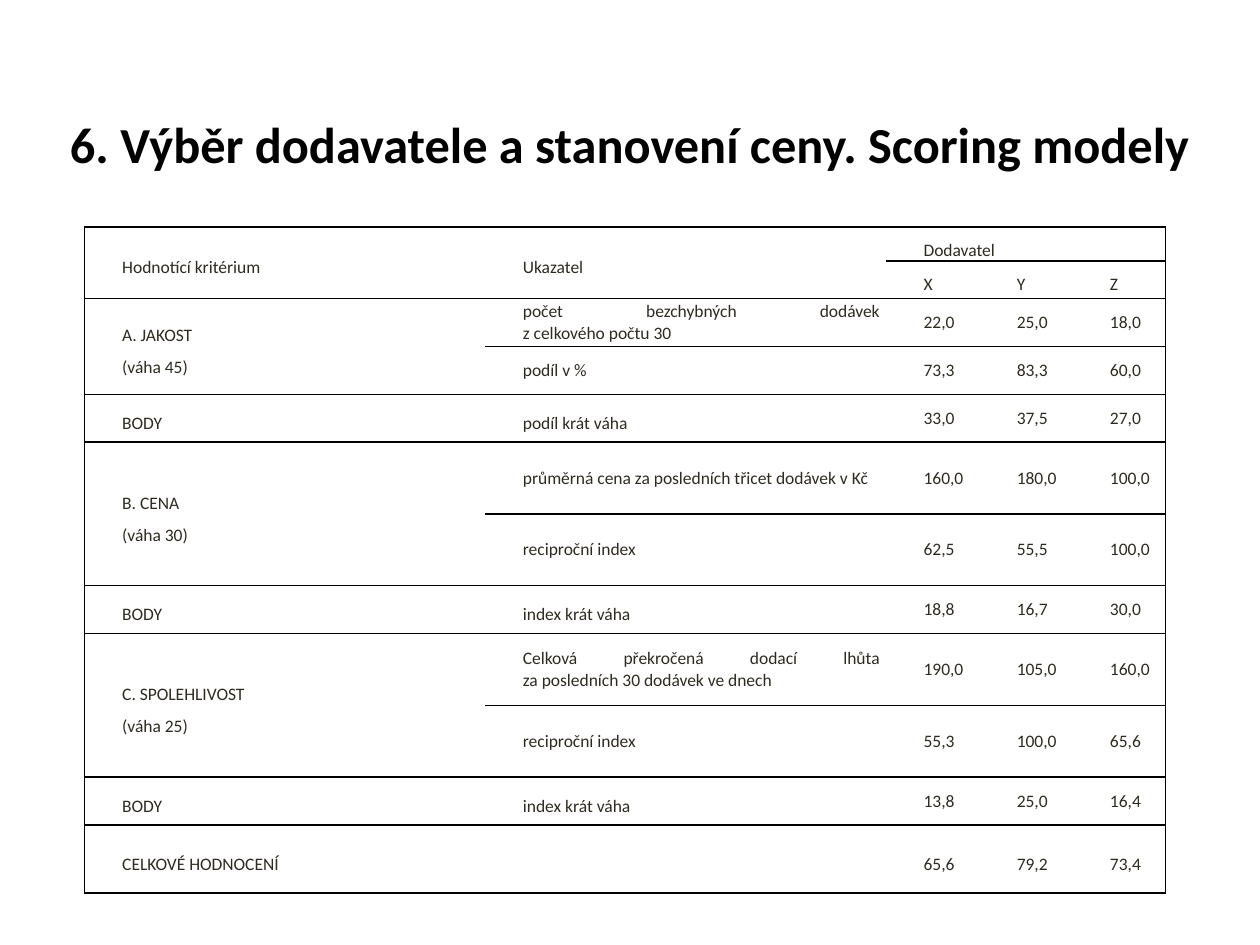
import pptx
import pptx.dml.color
import pptx.enum.text
import pptx.oxml
import pptx.oxml.ns
import pptx.util
from pptx.util import Inches

ALIGN = pptx.enum.text.PP_ALIGN
ANCHOR = pptx.enum.text.MSO_ANCHOR

THEME = {
    "font": "Calibri",
    "title_size": 28.8,
    "title_color": "000000",
    "title_spacing": 58,
    "table_size": 10,
    "table_color": "2F2B20",
    "cell_fill": "FFFFFF",
    "border_color": "000000",
    "border_width": 1,
    "loose_spacing": 1.5,
}

TITLE = "6. Výběr dodavatele a stanovení ceny. Scoring modely"

# Each row: kind, height, texts; None continues the merged cell above or to the left.
ROWS = [
    ("header", 0.27, ["Hodnotící kritérium", "Ukazatel", "Dodavatel", None, None]),
    ("header", 0.3, [None, None, "X", "Y", "Z"]),
    ("criterion", 0.38, ["A. JAKOST\n(váha 45)",
                         "počet bezchybných dodávek\nz celkového počtu 30",
                         "22,0", "25,0", "18,0"]),
    ("criterion", 0.38, [None, "podíl v %", "73,3", "83,3", "60,0"]),
    ("points", 0.38, ["BODY", "podíl krát váha", "33,0", "37,5", "27,0"]),
    ("criterion", 0.57, ["B. CENA\n(váha 30)",
                         "průměrná cena za posledních třicet dodávek v Kč",
                         "160,0", "180,0", "100,0"]),
    ("criterion", 0.57, [None, "reciproční index", "62,5", "55,5", "100,0"]),
    ("points", 0.38, ["BODY", "index krát váha", "18,8", "16,7", "30,0"]),
    ("criterion", 0.57, ["C. SPOLEHLIVOST\n(váha 25)",
                         "Celková překročená dodací lhůta\nza posledních 30 dodávek ve dnech",
                         "190,0", "105,0", "160,0"]),
    ("criterion", 0.57, [None, "reciproční index", "55,3", "100,0", "65,6"]),
    ("points", 0.38, ["BODY", "index krát váha", "13,8", "25,0", "16,4"]),
    ("total", 0.54, ["CELKOVÉ HODNOCENÍ", None, "65,6", "79,2", "73,4"]),
]
COLUMN_WIDTHS = [3.18, 3.18, 0.74, 0.74, 0.74]
# First and last cell (row, column) of each merged area
MERGES = [((0, 0), (1, 0)), ((0, 1), (1, 1)), ((0, 2), (0, 4)), ((2, 0), (3, 0)),
          ((5, 0), (6, 0)), ((8, 0), (9, 0)), ((11, 0), (11, 1))]
# How many leading columns of each row kind have loose line spacing
LOOSE_COLUMNS = {"header": 5, "criterion": 1, "points": 2, "total": 5}


def format_para(para, size, color, align, spacing, bold=False):
    para.alignment = align
    para.line_spacing = spacing
    for span in para.runs:
        span.font.name = THEME["font"]
        span.font.size = pptx.util.Pt(size)
        span.font.bold = bold
        span.font.color.rgb = pptx.dml.color.RGBColor.from_string(color)


def set_borders(cell, drawn_sides):
    """Draw the given sides (of L, R, T, B) and clear the others."""
    width = pptx.util.Pt(THEME["border_width"])
    paint = f'<a:solidFill><a:srgbClr val="{THEME["border_color"]}"/></a:solidFill>'
    properties = cell._tc.get_or_add_tcPr()
    for side in "LRTB":
        fill = paint if side in drawn_sides else "<a:noFill/>"
        properties.append(pptx.oxml.parse_xml(
            f'<a:ln{side} {pptx.oxml.ns.nsdecls("a")} w="{width}">{fill}</a:ln{side}>'))


def add_title(page):
    box = page.shapes.title
    box.left, box.top, box.width, box.height = map(Inches, (0.5, 0.3, 9, 1.32))
    frame = box.text_frame
    frame.text = TITLE
    frame.word_wrap = True
    frame.auto_size = pptx.enum.text.MSO_AUTO_SIZE.NONE
    frame.vertical_anchor = ANCHOR.MIDDLE
    frame.margin_left = frame.margin_right = frame.margin_bottom = 0
    frame.margin_top = Inches(0.03)
    format_para(frame.paragraphs[0], THEME["title_size"], THEME["title_color"],
                ALIGN.CENTER, pptx.util.Pt(THEME["title_spacing"]), bold=True)


def fill_cell(cell, text, kind, column):
    cell.margin_left = cell.margin_right = Inches(0.05)
    cell.margin_top = cell.margin_bottom = 0
    cell.vertical_anchor = ANCHOR.BOTTOM if text == "Dodavatel" else ANCHOR.MIDDLE
    para = cell.text_frame.paragraphs[0]
    para.text = (text or "").replace("\n", "\v")
    para._p.get_or_add_pPr().set("marL", str(Inches(0.25)))
    is_criterion = kind == "criterion" and column == 0
    spacing = THEME["loose_spacing"] if column < LOOSE_COLUMNS[kind] else 1.0
    format_para(para, THEME["table_size"], THEME["table_color"],
                ALIGN.LEFT if is_criterion else ALIGN.JUSTIFY, spacing)
    para.font.size = pptx.util.Pt(THEME["table_size"])


def add_scoring_table(page):
    frame = page.shapes.add_table(
        len(ROWS), len(COLUMN_WIDTHS), Inches(0.67), Inches(1.8),
        Inches(sum(COLUMN_WIDTHS)), Inches(sum(height for _, height, _ in ROWS)))
    table = frame.table
    table.first_row = table.horz_banding = False
    for column, width in zip(table.columns, COLUMN_WIDTHS):
        column.width = Inches(width)
    for (top, left), (bottom, right) in MERGES:
        table.cell(top, left).merge(table.cell(bottom, right))

    last = len(COLUMN_WIDTHS) - 1
    for r, (kind, height, texts) in enumerate(ROWS):
        table.rows[r].height = Inches(height)
        for c, text in enumerate(texts):
            cell = table.cell(r, c)
            fill_cell(cell, text, kind, c)
            continues_down = any(left <= c <= right and top < r <= bottom
                                 for (top, left), (bottom, right) in MERGES)
            reach = c + cell.span_width - 1 if cell.is_merge_origin else c
            sides = "B" if continues_down else "TB"
            sides += "L" if c == 0 else ""
            sides += "R" if reach == last else ""
            set_borders(cell, sides)
            cell.fill.solid()
            cell.fill.fore_color.rgb = pptx.dml.color.RGBColor.from_string(THEME["cell_fill"])


def main():
    deck = pptx.Presentation()
    deck.slide_width, deck.slide_height = Inches(10), Inches(7.5)
    page = deck.slides.add_slide(deck.slide_layouts[5])
    add_title(page)
    add_scoring_table(page)
    deck.save("out.pptx")


if __name__ == "__main__":
    main()
